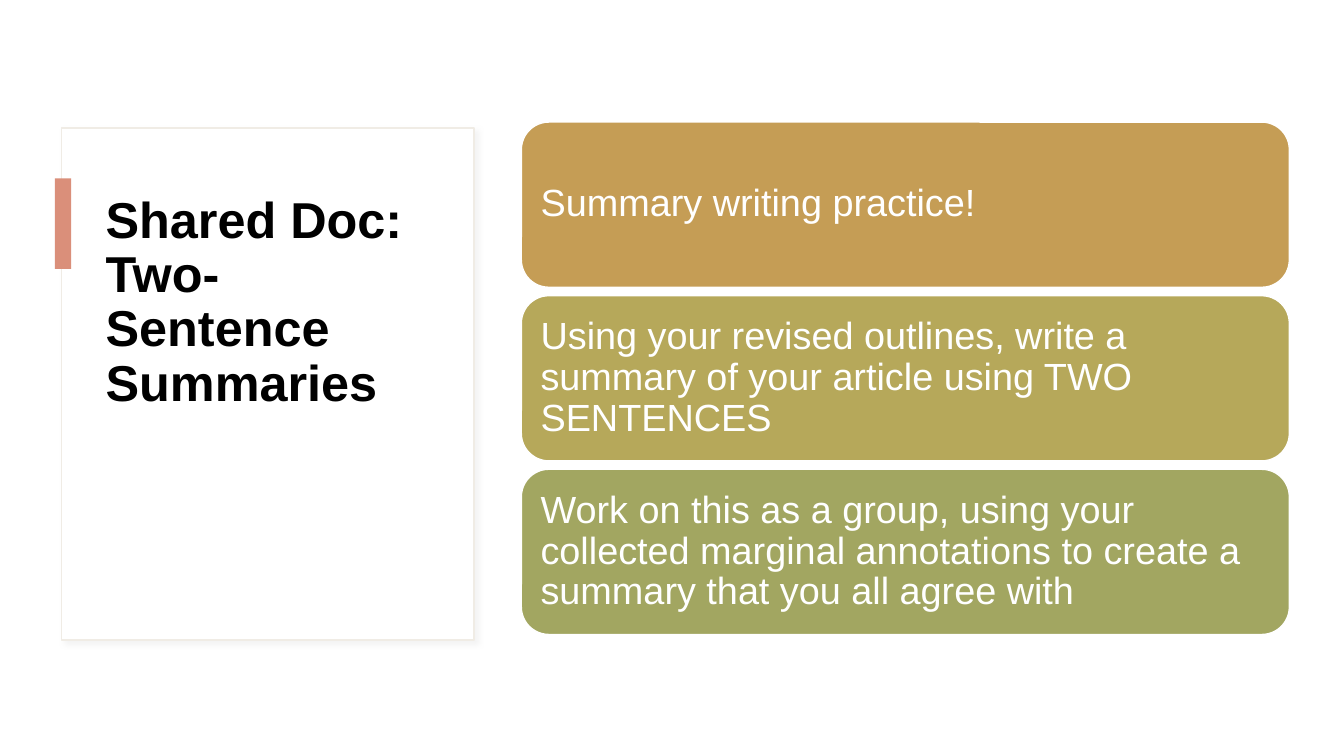
from lxml import etree
from pptx import Presentation
from pptx.dml.color import RGBColor
from pptx.enum.shapes import MSO_SHAPE as SHAPE
from pptx.enum.text import MSO_ANCHOR as ANCHOR, PP_ALIGN as ALIGN
from pptx.oxml import parse_xml
from pptx.util import Pt


def color(value):
    return RGBColor.from_string(value)


def add_text(sp, text, size, ink, bold=False):
    tf = sp.text_frame
    tf.word_wrap = True
    p = tf.paragraphs[0]
    p.alignment = ALIGN.LEFT
    p.line_spacing = 0.9
    r = p.add_run()
    r.text = text
    r.font.name = "Arial"
    r.font.size = Pt(size)
    r.font.bold = bold
    r.font.color.rgb = color(ink)
    return tf


prs = Presentation()
prs.slide_width, prs.slide_height = Pt(960), Pt(540)
s = prs.slides.add_slide(prs.slide_layouts[6])

# Title card with a soft shadow
card = s.shapes.add_shape(SHAPE.RECTANGLE, Pt(44), Pt(91.4), Pt(294.5), Pt(365.8))
card.fill.solid()
card.fill.fore_color.rgb = color("FFFFFF")
card.line.color.rgb = color("F0ECE5")
card.line.width = Pt(1)
card.shadow.inherit = False
effects = card._element.spPr.find("{*}effectLst")
effects.append(parse_xml(
    '<a:outerShdw xmlns:a="http://schemas.openxmlformats.org/drawingml/2006/main" '
    f'blurRad="{Pt(4)}" dist="{Pt(3)}" dir="2700000" algn="tl" rotWithShape="0">'
    '<a:srgbClr val="D9D9D9"><a:alpha val="30000"/></a:srgbClr></a:outerShdw>'))

# Title
title = s.shapes.add_textbox(Pt(68.4), Pt(135.4), Pt(244), Pt(277.2))
add_text(title, "Shared Doc: Two-Sentence Summaries", 36, "000000", bold=True)

# Accent tab on the card's edge
tab = s.shapes.add_shape(SHAPE.RECTANGLE, Pt(39.3), Pt(127.4), Pt(11.5), Pt(64.8))
tab.fill.solid()
tab.fill.fore_color.rgb = color("DA8F7A")
tab.line.fill.background()
tab.shadow.inherit = False

# Stacked instruction boxes
STEP_TOP, STEP_HEIGHT, STEP_PITCH = 87.2, 118, 124
steps = [
    ("C59D55", "Summary writing practice!"),
    ("B6A85A", "Using your revised outlines, write a summary of your article "
               "using TWO SENTENCES"),
    ("A2A661", "Work on this as a group, using your collected marginal "
               "annotations to create a summary that you all agree with"),
]
for i, (fill, text) in enumerate(steps):
    step = s.shapes.add_shape(SHAPE.ROUNDED_RECTANGLE, Pt(372.4),
                              Pt(STEP_TOP + i * STEP_PITCH), Pt(548.6), Pt(STEP_HEIGHT))
    step.fill.solid()
    step.fill.fore_color.rgb = color(fill)
    step.line.color.rgb = color("FFFFFF")
    step.line.width = Pt(1)
    step.shadow.inherit = False
    tf = add_text(step, text, 27, "FFFFFF")
    tf.vertical_anchor = ANCHOR.MIDDLE
    tf.margin_left = tf.margin_right = tf.margin_top = tf.margin_bottom = Pt(8)

prs.save("out.pptx")
